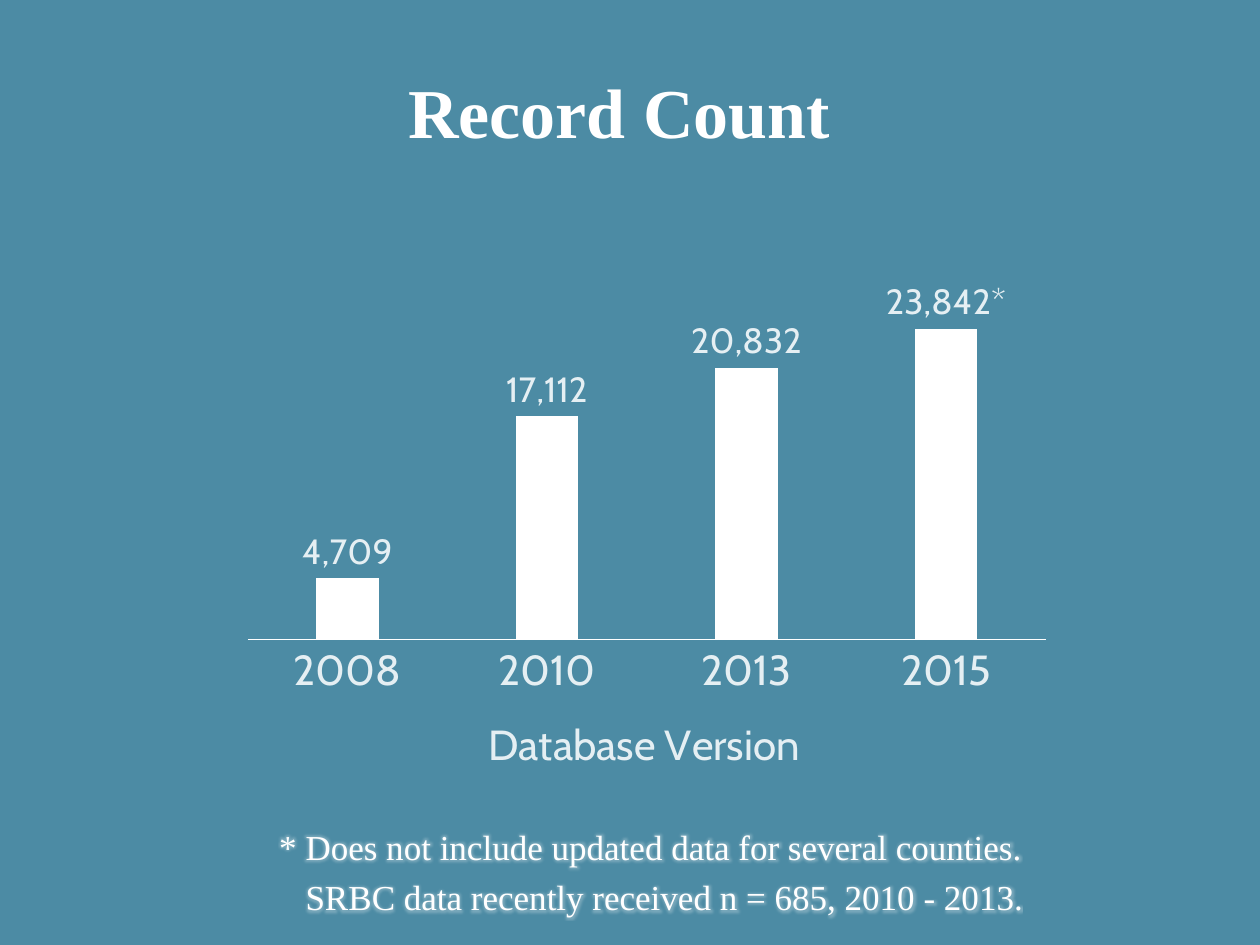
"""Build a slide with a column chart of record counts per database version."""
from dataclasses import dataclass

from lxml import etree
from pptx import Presentation
from pptx import util as u
from pptx.chart import data as chart_data
from pptx.dml.color import RGBColor
from pptx.enum import chart as chart_enum
from pptx.enum import text
from pptx.oxml import ns

TEAL = RGBColor(0x4C, 0x8B, 0xA4)
WHITE = RGBColor(0xFF, 0xFF, 0xFF)
PALE = RGBColor(0xE5, 0xEF, 0xF3)
SERIF = "Times New Roman"
SANS = "Cabin"
RECORDS = {"2008": 4709, "2010": 17112, "2013": 20832, "2015": 23842}


@dataclass(frozen=True)
class Line:
    """One paragraph and its left indent in centimetres."""
    wording: str
    indent: float = 0


@dataclass(frozen=True)
class TextBlock:
    """A text box: place in centimetres, lines and formats."""
    place: tuple[float, float, float, float]
    lines: tuple[Line, ...]
    font: dict
    paragraph: dict
    anchor: text.MSO_ANCHOR = text.MSO_ANCHOR.TOP
    glow: bool = False


BLOCKS = (
    TextBlock((1.05, 1.18, 22.86, 2.11), (Line("Record Count"),),
              {"name": SERIF, "size": u.Pt(40), "bold": True},
              {"alignment": text.PP_ALIGN.CENTER}, text.MSO_ANCHOR.MIDDLE),
    TextBlock((5.38, 16.51, 16.08, 2.11),
              (Line("* Does not include updated data for several counties."),
               Line("SRBC data recently received n = 685, 2010 - 2013.", 0.53)),
              {"name": SERIF, "size": u.Pt(20)},
              {"space_before": u.Pt(4.6)}, glow=True),
)


def apply(target, values: dict) -> None:
    """Set each named attribute on the target."""
    for name, value in values.items():
        setattr(target, name, value)


def style_font(font, color: RGBColor, values: dict) -> None:
    """Give a font its colour and its other formats."""
    apply(font, values)
    font.color.rgb = color


def add_glow(span) -> None:
    """Put a soft white glow around a run."""
    effects = etree.Element(ns.qn("a:effectLst"))
    glow = etree.SubElement(effects, ns.qn("a:glow"), rad="63500")
    color = etree.SubElement(glow, ns.qn("a:srgbClr"), val=str(WHITE))
    etree.SubElement(color, ns.qn("a:alpha"), val="25000")
    span._r.rPr.find(ns.qn("a:solidFill")).addnext(effects)


def add_text(page, block: TextBlock) -> None:
    """Draw one text block."""
    box = page.shapes.add_textbox(*map(u.Cm, block.place))
    frame = box.text_frame
    apply(frame, {"word_wrap": True, "vertical_anchor": block.anchor})
    for index, line in enumerate(block.lines):
        para = frame.add_paragraph() if index else frame.paragraphs[0]
        apply(para, block.paragraph)
        para._p.get_or_add_pPr().set("marL", str(u.Cm(line.indent)))
        span = para.add_run()
        span.text = line.wording
        style_font(span.font, WHITE, block.font)
        if block.glow:
            add_glow(span)


def place_part(part, values: dict, inner: bool = False) -> None:
    """Fix a chart part at fractions of the chart area."""
    layout = part.find(ns.qn("c:layout"))
    if layout is None:
        layout = etree.Element(ns.qn("c:layout"))
        part.insert(0, layout)
    manual = etree.SubElement(layout, ns.qn("c:manualLayout"))
    settings = {"layoutTarget": "inner"} if inner else {}
    settings |= {"xMode": "edge", "yMode": "edge"} | values
    for name, value in settings.items():
        etree.SubElement(manual, ns.qn(f"c:{name}"), val=str(value))


def add_record_chart(page) -> None:
    """Draw the record counts as columns."""
    source = chart_data.CategoryChartData(number_format="#,##0")
    source.categories = list(RECORDS)
    source.add_series("Series 1", list(RECORDS.values()))
    chart = page.shapes.add_chart(
        chart_enum.XL_CHART_TYPE.COLUMN_CLUSTERED,
        *map(u.Cm, (4.66, 4.78, 16.76, 11.43)), source).chart
    apply(chart, {"has_title": False, "has_legend": False})
    style_font(chart.font, WHITE, {"name": SANS, "size": u.Pt(10)})

    plot = chart.plots[0]
    apply(plot, {"gap_width": 219, "vary_by_categories": False})
    place_part(plot._element.getparent(),
               {"x": 0.02, "y": 0.02, "w": 0.96, "h": 0.69}, inner=True)
    series = plot.series[0]
    series.format.fill.solid()
    series.format.fill.fore_color.rgb = WHITE

    no_ticks = {"major_tick_mark": chart_enum.XL_TICK_MARK.NONE,
                "minor_tick_mark": chart_enum.XL_TICK_MARK.NONE,
                "has_major_gridlines": False}
    years, counts = chart.category_axis, chart.value_axis
    apply(years, no_ticks)
    apply(counts, no_ticks | {
        "minimum_scale": 0, "maximum_scale": 30000,
        "tick_label_position": chart_enum.XL_TICK_LABEL_POSITION.NONE})
    counts.format.line.fill.background()
    years.format.line.color.rgb = WHITE
    years.format.line.width = u.Pt(0.75)
    axis_font = {"name": SANS, "size": u.Pt(24), "bold": False}
    style_font(years.tick_labels.font, PALE, axis_font)
    span = years.axis_title.text_frame.paragraphs[0].add_run()
    span.text = "Database Version"
    style_font(span.font, PALE, axis_font)
    place_part(years.axis_title._element, {"x": 0.3, "y": 0.83})

    label_font = {"name": SANS, "size": u.Pt(20)}
    above = chart_enum.XL_LABEL_POSITION.OUTSIDE_END
    labels = series.data_labels
    apply(labels, {"show_value": True, "number_format": "#,##0",
                   "number_format_is_linked": False, "position": above})
    style_font(labels.font, PALE, label_font)
    latest = series.points[len(RECORDS) - 1].data_label
    span = latest.text_frame.paragraphs[0].add_run()
    span.text = "23,842*"
    style_font(span.font, PALE, label_font)
    latest.position = above


def main() -> None:
    """Build and save the deck."""
    deck = Presentation()
    apply(deck, {"slide_width": u.Cm(25.4), "slide_height": u.Cm(19.05)})
    page = deck.slides.add_slide(deck.slide_layouts[6])
    page.background.fill.solid()
    page.background.fill.fore_color.rgb = TEAL
    for block in BLOCKS:
        add_text(page, block)
    add_record_chart(page)
    deck.save("out.pptx")


if __name__ == "__main__":
    main()
